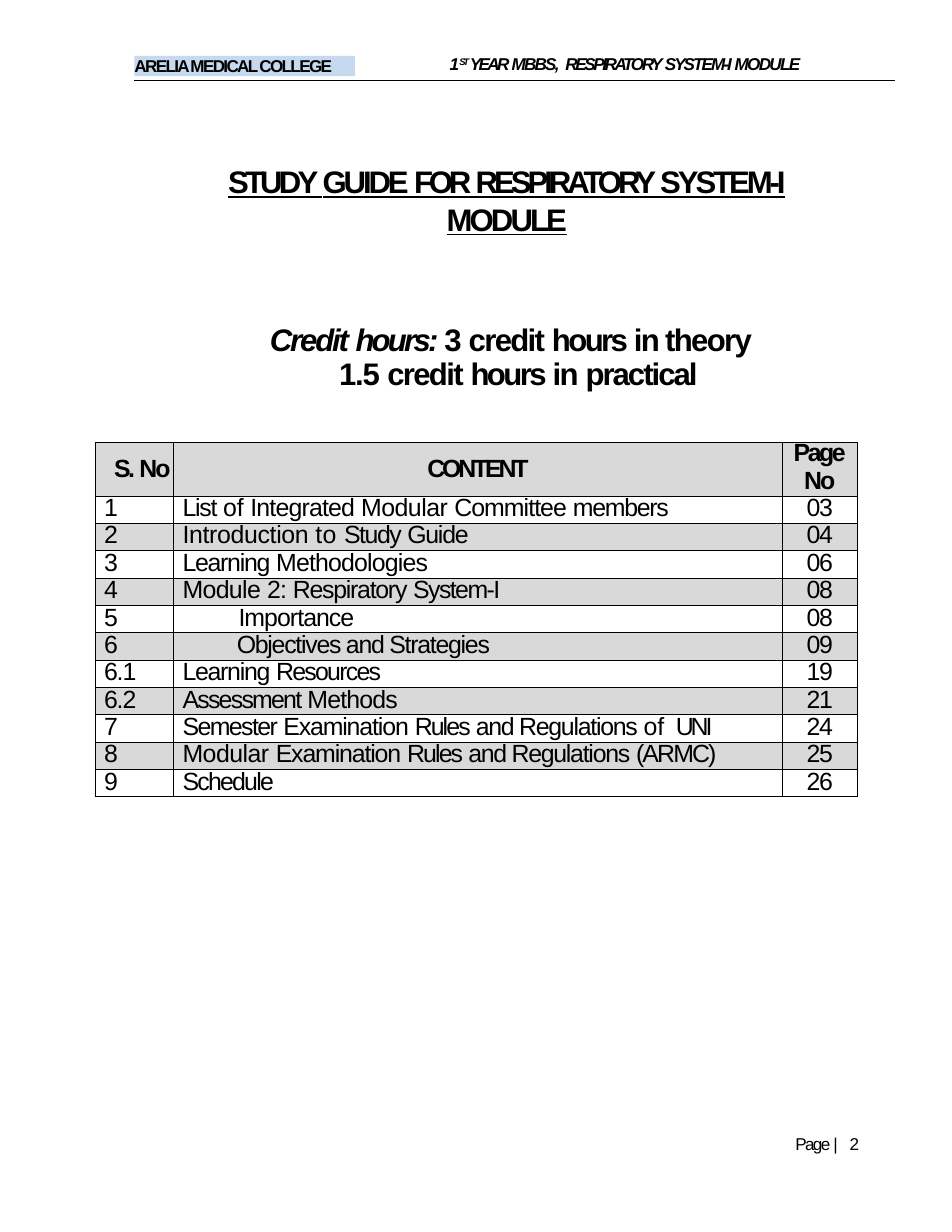
from pptx import Presentation
from pptx.dml.color import RGBColor
from pptx.enum.shapes import MSO_CONNECTOR as Connector, MSO_SHAPE as Shape
from pptx.enum.text import MSO_ANCHOR as Anchor, PP_ALIGN as Align
from pptx.oxml.ns import qn
from pptx.util import Cm, Pt
from lxml.etree import SubElement

BLACK = RGBColor(0, 0, 0)
GREY = RGBColor(0xD9, 0xD9, 0xD9)
BLUE = RGBColor(0xC5, 0xD9, 0xEF)

# Spans are (text, letter spacing in points)
TITLE = [("STUDY ", -2.5), ("GUIDE ", -2), ("FOR ", -2.8), ("RESPIRATORY ", -2.6),
         ("SYSTEM-I", -2), (" ", -3.1), ("MODULE", -1.9)]
THEORY = [("Credit ", -1.4), ("hours: ", -1.8), ("3 ", -1), ("credit ", -1.1),
          ("hours ", -1.7), ("in theory", -1.1)]
PRACTICAL = [("1.5 ", -0.8), ("credit ", -1.1), ("hours ", -1.7), ("in ", -1.1),
             ("practical", -1.3)]
MODULE_NAME = [("1", -0.9), ("ST ", -1.4), ("YEAR ", -1.7), ("MBBS,", -1.2), (" ", 0.7),
               ("RESPIRATORY ", -1.6), ("SYSTEM-I ", -1.3), ("MODULE", -1.1)]

# Contents: number, topic spans, page, topic indent in cm
CONTENTS = [
    ("1", [("List ", -0.8), ("of ", -0.1), ("Integrated ", -0.5), ("Modular ", -0.3),
           ("Committee ", -0.6), ("members", -0.8)], "03", 0.2),
    ("2", [("Introduction ", -0.2), ("to ", 0.2), ("Study ", -0.9), ("Guide", -0.8)], "04", 0.2),
    ("3", [("Learning ", -0.8), ("Methodologies", -0.5)], "06", 0.2),
    ("4", [("Module ", -0.4), ("2: ", -0.6), ("Respiratory ", -0.8), ("System-I", -1)], "08", 0.2),
    ("5", [("Importance", -0.6)], "08", 1.47),
    ("6", [("Objectives and Strategies", -0.8)], "09", 1.43),
    ("6.1", [("Learning ", -0.8), ("Resources", -1.1)], "19", 0.2),
    ("6.2", [("Assessment ", -1.1), ("Methods", -0.5)], "21", 0.2),
    ("7", [("Semester ", -1), ("Examination ", -0.7), ("Rules ", -1.2),
           ("and Regulations ", -0.8), ("of", -0.1), (" ", 3), ("UNI", -1.9)], "24", 0.2),
    ("8", [("Modular ", -0.3), ("Examination ", -0.7), ("Rules ", -1.2),
           ("and Regulations ", -0.8), ("(ARMC)", -1.2)], "25", 0.2),
    ("9", [("Schedule", -1.1)], "26", 0.2),
]


def write(para, spans, size, bold=False, align=Align.LEFT, indent=0, line=None, before=0):
    """Fill a paragraph with letter-spaced spans."""
    font = para.font
    font.name, font.size, font.bold = "Arial", Pt(size), bold
    font.color.rgb = BLACK
    para.alignment = align
    para.space_before = Pt(before)
    if line:
        para.line_spacing = Pt(line)
    para._p.get_or_add_pPr().set("marL", str(Cm(indent)))
    for text, spacing in spans:
        span = para.add_run()
        span.text = text
        span.font._element.set("spc", str(round(spacing * 100)))
    return para


def clear_margins(frame, top=0):
    frame.word_wrap = True
    frame.margin_left = frame.margin_right = frame.margin_bottom = 0
    frame.margin_top = Cm(top)
    return frame


def add_text(page, left, top, width, height, inset=0):
    box = page.shapes.add_textbox(Cm(left), Cm(top), Cm(width), Cm(height))
    return clear_margins(box.text_frame, inset)


def add_header(page):
    rule = page.shapes.add_connector(Connector.STRAIGHT, Cm(3.05), Cm(1.83), Cm(20.29), Cm(1.83))
    rule.line.color.rgb = BLACK
    rule.line.width = Pt(0.75)
    SubElement(rule._element.spPr, qn("a:effectLst"))

    frame = add_text(page, 10.2, 1.19, 9.96, 0.51, 0.03)
    para = write(frame.paragraphs[0], MODULE_NAME, 11, True, before=1)
    para.font.italic = True
    ordinal = para.runs[1].font
    ordinal.size = Pt(10.5)
    ordinal._element.set("baseline", "32000")

    label = page.shapes.add_shape(Shape.RECTANGLE, Cm(3.05), Cm(1.27), Cm(5), Cm(0.46))
    label.shadow.inherit = False
    label.fill.solid()
    label.fill.fore_color.rgb = BLUE
    label.line.fill.background()
    frame = clear_margins(label.text_frame)
    frame.vertical_anchor = Anchor.TOP
    write(frame.paragraphs[0], [("ARELIA MEDICAL COLLEGE", -1.1)], 11, True, line=12.9)


def add_title(page):
    frame = add_text(page, 3.75, 3.66, 15.49, 4.34, 0.03)
    para = write(frame.paragraphs[0], TITLE, 20, True, Align.CENTER, before=1)
    para.font.underline = True
    para = write(frame.add_paragraph(), THEORY, 20, True, Align.CENTER, 0.18, 21.6, 56)
    for span in para.runs[:2]:
        span.font.italic = True
    write(frame.add_paragraph(), PRACTICAL, 20, True, indent=3.94, line=21.6)


def style_cell(cell, shaded, top=0):
    cell.margin_left = cell.margin_right = cell.margin_bottom = 0
    cell.margin_top = Cm(top)
    properties = cell._tc.get_or_add_tcPr()
    for side in ("a:lnL", "a:lnR", "a:lnT", "a:lnB"):
        border = SubElement(properties, qn(side), w=str(Pt(0.5)))
        fill = SubElement(border, qn("a:solidFill"))
        SubElement(fill, qn("a:srgbClr"), val=str(BLACK))
    if shaded:
        cell.fill.solid()
        cell.fill.fore_color.rgb = GREY
    else:
        cell.fill.background()
    return cell.text_frame.paragraphs[0]


def add_contents(page):
    count = len(CONTENTS) + 1
    table = page.shapes.add_table(count, 3, Cm(2.16), Cm(10.03), Cm(17.28), Cm(8.04)).table
    for column, width in zip(table.columns, (1.78, 13.8, 1.7)):
        column.width = Cm(width)
    for index, row in enumerate(table.rows):
        row.height = Cm(0.62 if index else 1.22)

    # Heading row
    number, topic, number_page = table.rows[0].cells
    write(style_cell(number, True, 0.28), [("S. ", -1.7), ("No", -1.2)], 16, True,
          indent=0.43, before=8)
    write(style_cell(topic, True, 0.28), [("CONTENT", -2)], 16, True, Align.CENTER, before=8)
    write(style_cell(number_page, True), [("Page", -1.6)], 16, True, Align.CENTER, line=15.6)
    write(number_page.text_frame.add_paragraph(), [("No", -1.1)], 16, True, Align.CENTER,
          line=18.1)

    # Entries, every second one shaded
    for index, (number, topic, number_page, indent) in enumerate(CONTENTS, 1):
        shaded = index % 2 == 0
        first, middle, last = (style_cell(cell, shaded) for cell in table.rows[index].cells)
        write(first, [(number, -0.7 if "." in number else 0)], 16, indent=0.2, line=16.6)
        write(middle, topic, 16, indent=indent, line=16.6)
        write(last, [(number_page, -0.8)], 16, align=Align.CENTER, line=16.6)


def add_footer(page):
    frame = add_text(page, 18.01, 25.76, 1.63, 0.46)
    write(frame.paragraphs[0], [("Page ", -1.1), ("| ", 2.2), ("2", -0.6)], 11,
          indent=0.03, line=11.5)


def main():
    deck = Presentation()
    deck.slide_width, deck.slide_height = Cm(21.59), Cm(27.94)
    page = deck.slides.add_slide(deck.slide_layouts[6])
    add_header(page)
    add_title(page)
    add_contents(page)
    add_footer(page)
    deck.save("out.pptx")


if __name__ == "__main__":
    main()
